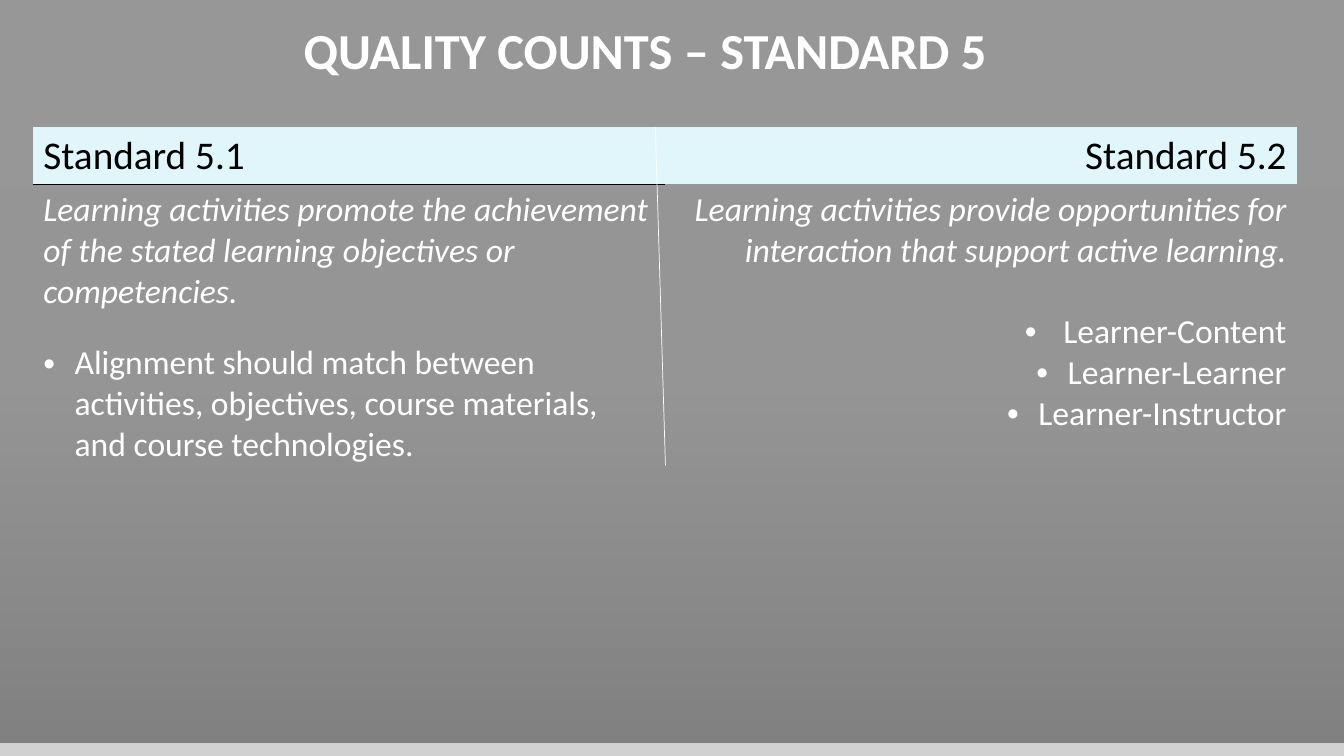
from copy import deepcopy

from lxml.etree import SubElement
from pptx import Presentation
from pptx.dml.color import RGBColor
from pptx.enum.shapes import MSO_CONNECTOR, MSO_SHAPE
from pptx.enum.text import MSO_AUTO_SIZE, PP_ALIGN
from pptx.oxml import parse_xml
from pptx.oxml.ns import nsdecls, qn
from pptx.util import Inches, Pt

COLORS = {
    "white": "FFFFFF",
    "mist": "FBFBFB",
    "silver": "D1D1D1",
    "charcoal": "313133",
    "ice": "E1F6FB",
    "black": "000000",
}
NO_TABLE_STYLE = "{2D5ABB26-0587-4C30-8999-92F81FD0307C}"


class StandardSlide:
    font = "Calibri"

    def __init__(self, presentation):
        self.slide = presentation.slides.add_slide(presentation.slide_layouts[6])

    def color(self, name):
        return RGBColor.from_string(COLORS[name])

    def background(self, names):
        fill = self.slide.background.fill
        fill.gradient()
        fill.gradient_angle = 270
        stop_list = self.slide.element.find(".//" + qn("a:gsLst"))
        stop_list.insert(1, deepcopy(stop_list[0]))
        for index, (stop, name) in enumerate(zip(fill.gradient_stops, names)):
            stop.position = index / (len(names) - 1)
            stop.color.rgb = self.color(name)

    def panel(self, left, top, width, height, name, opacity):
        shape = self.slide.shapes.add_shape(
            MSO_SHAPE.RECTANGLE, Inches(left), Inches(top), Inches(width), Inches(height))
        shape.shadow.inherit = False
        shape.line.fill.background()
        shape.fill.solid()
        shape.fill.fore_color.rgb = self.color(name)
        color = shape.element.spPr.find(".//" + qn("a:srgbClr"))
        SubElement(color, qn("a:alpha"), val=str(opacity * 1000))

    def add_text(self, paragraph, text, size, color="white", align=PP_ALIGN.LEFT,
                 bold=False, italic=False, indent=0, space_before=0):
        paragraph.alignment = align
        if space_before:
            paragraph.space_before = Pt(space_before)
        if indent:
            properties = paragraph._p.get_or_add_pPr()
            properties.set("marL", str(Inches(indent)))
            properties.set("indent", str(-Inches(indent)))
            SubElement(properties, qn("a:buFont"), typeface="Arial")
            SubElement(properties, qn("a:buChar"), char="•")
        run = paragraph.add_run()
        run.text = text
        run.font.name = self.font
        run.font.size = Pt(size)
        run.font.bold = bold
        run.font.italic = italic
        run.font.color.rgb = self.color(color)

    def title(self, left, top, width, height, text):
        shape = self.slide.shapes.add_textbox(
            Inches(left), Inches(top), Inches(width), Inches(height))
        shape.text_frame.word_wrap = True
        shape.text_frame.auto_size = MSO_AUTO_SIZE.SHAPE_TO_FIT_TEXT
        self.add_text(shape.text_frame.paragraphs[0], text, 36,
                      align=PP_ALIGN.CENTER, bold=True)

    def border(self, cell, side):
        cell._tc.get_or_add_tcPr().insert(0, parse_xml(
            f'<a:{side} {nsdecls("a")} w="{Pt(1)}"><a:solidFill>'
            f'<a:srgbClr val="{COLORS["black"]}"/></a:solidFill></a:{side}>'))

    def standards_table(self, left, top, width, row_heights, standards):
        frame = self.slide.shapes.add_table(
            2, len(standards), Inches(left), Inches(top),
            Inches(width), Inches(sum(row_heights)))
        table = frame.table
        table.first_row = False
        table.horz_banding = False
        frame.element.find(".//" + qn("a:tableStyleId")).text = NO_TABLE_STYLE
        for row, height in zip(table.rows, row_heights):
            row.height = Inches(height)
        for index, (heading, align, statement, gap, bullets) in enumerate(standards):
            header, body = table.cell(0, index), table.cell(1, index)
            header.fill.solid()
            header.fill.fore_color.rgb = self.color("ice")
            body.fill.background()
            self.add_text(header.text_frame.paragraphs[0], heading, 28, "black", align)
            self.add_text(body.text_frame.paragraphs[0], statement, 24,
                          align=align, italic=True)
            for number, (text, indent) in enumerate(bullets):
                self.add_text(body.text_frame.add_paragraph(), text, 24, align=align,
                              indent=indent, space_before=0 if number else gap)
        self.border(table.cell(0, 0), "lnB")
        self.border(table.cell(1, 0), "lnT")

    def divider(self, start, end):
        connector = self.slide.shapes.add_connector(
            MSO_CONNECTOR.STRAIGHT, *map(Inches, start + end))
        connector.line.color.rgb = self.color("white")
        connector.line.width = Pt(0.5)
        SubElement(connector.element.spPr, qn("a:effectLst"))


def main():
    presentation = Presentation()
    presentation.slide_width = Inches(13.33)
    presentation.slide_height = Inches(7.5)
    page = StandardSlide(presentation)
    page.background(["white", "mist", "silver"])
    page.panel(0, 0, 13.33, 7.37, "charcoal", 50)
    page.title(1.95, 0.14, 8.9, 0.71, "QUALITY COUNTS – STANDARD 5")
    page.standards_table(0.33, 1.26, 12.53, [0.56, 2.81], [
        ("Standard 5.1", PP_ALIGN.LEFT,
         "Learning activities promote the achievement of the stated learning "
         "objectives or competencies.", 22,
         [("Alignment should match between activities, objectives, course "
           "materials, and course technologies.", 0.31)]),
        ("Standard 5.2", PP_ALIGN.RIGHT,
         "Learning activities provide opportunities for interaction that "
         "support active learning.", 29,
         [("Learner-Content", 0.38), ("Learner-Learner", 0.31),
          ("Learner-Instructor", 0.31)]),
    ])
    page.divider((6.5, 1.26), (6.6, 4.62))
    presentation.save("out.pptx")


if __name__ == "__main__":
    main()
